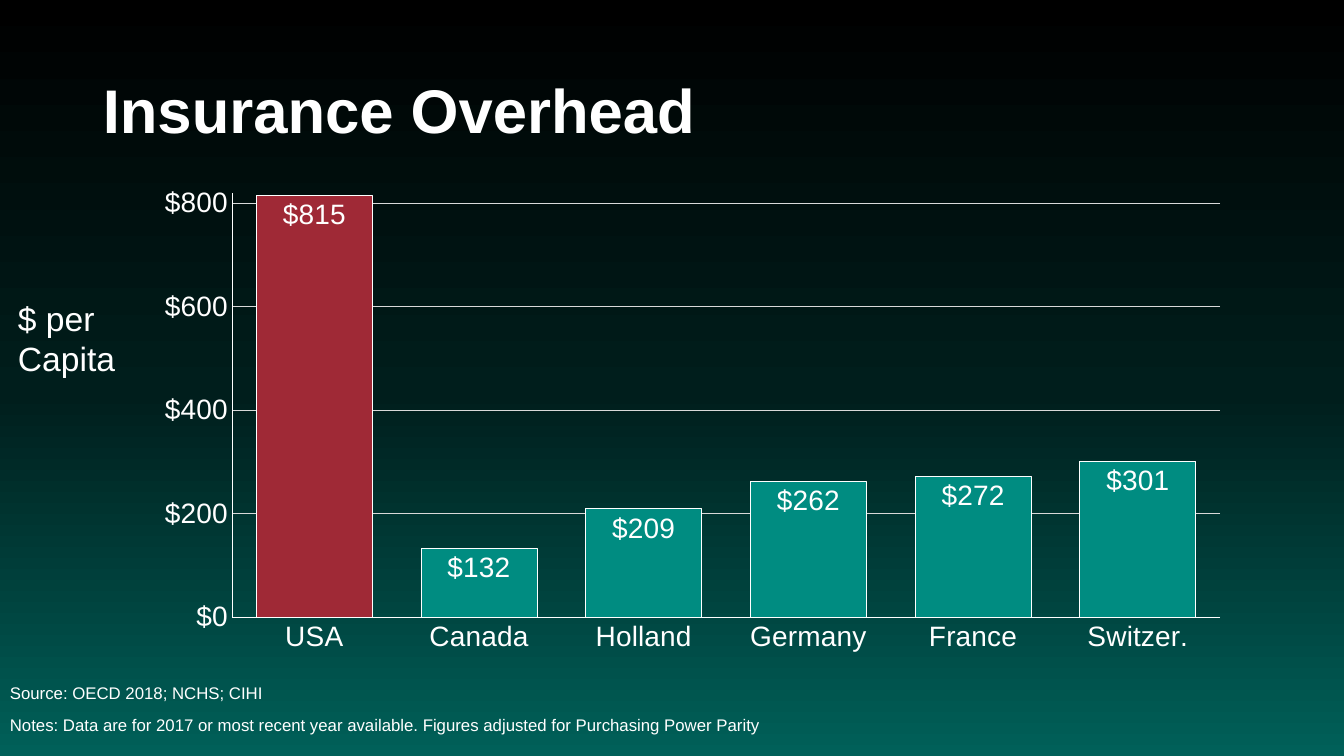
import pptx
import pptx.util
import pptx.chart.data
import pptx.dml.color
import pptx.enum.chart
import pptx.enum.text
import pptx.oxml
import pptx.oxml.ns
import lxml.etree

Inches, Pt = pptx.util.Inches, pptx.util.Pt
qn = pptx.oxml.ns.qn
COLORS = {"text": "FFFFFF", "bar": "008C81", "usa": "9F2936", "grid": "D9D9D9"}
BACKGROUND = [(0, "000000"), (52, "001E1C"), (100, "006059")]
DOLLARS = '"$"#,##0'


def rgb(name):
    return pptx.dml.color.RGBColor.from_string(COLORS[name])


def style(font, size, bold=False):
    font.name, font.size, font.bold = "Arial", Pt(size), bold
    font.color.rgb = rgb("text")


prs = pptx.Presentation()
prs.slide_width, prs.slide_height = Inches(13.33), Inches(7.5)
s = prs.slides.add_slide(prs.slide_layouts[5])

# Background gradient, top to bottom
fill = s.background.fill
fill.gradient()
fill.gradient_angle = 270
stops = next(s.background._cSld.iter(qn("a:gsLst")))
for stop in list(stops):
    stops.remove(stop)
for percent, color in BACKGROUND:
    stop = lxml.etree.SubElement(stops, qn("a:gs"), pos=str(percent * 1000))
    lxml.etree.SubElement(stop, qn("a:srgbClr"), val=color)

# Title, axis caption and source notes
notes = ("Source: OECD 2018; NCHS; CIHI\n"
         "Notes: Data are for 2017 or most recent year available. "
         "Figures adjusted for Purchasing Power Parity")
texts = [
    (s.shapes.title, "Insurance Overhead", (0.92, 0.4, 11.5, 1.45), 44, True, 0.9),
    (None, "$ per Capita", (0.08, 2.9, 1.87, 0.91), 24, False, 1.0),
    (None, notes, (0, 6.58, 9, 0.92), 12, False, 0.9),
]
for sp, text, box, size, bold, spacing in texts:
    box = [Inches(v) for v in box]
    if sp is None:
        sp = s.shapes.add_textbox(*box)
    sp.left, sp.top, sp.width, sp.height = box
    tf = sp.text_frame
    tf.text = text
    tf.word_wrap = True
    tf.auto_size = pptx.enum.text.MSO_AUTO_SIZE.NONE
    tf.vertical_anchor = pptx.enum.text.MSO_ANCHOR.MIDDLE
    for i, p in enumerate(tf.paragraphs):
        p.alignment = pptx.enum.text.PP_ALIGN.LEFT
        p.line_spacing = spacing
        p.space_before = Pt(10 if i else 0)
        for r in p.runs:
            style(r.font, size, bold)

# Column chart
data = pptx.chart.data.CategoryChartData()
data.categories = ["USA", "Canada", "Holland", "Germany", "France", "Switzer."]
data.add_series("Series 1", [815, 132, 209, 262, 272, 301])
chart = s.shapes.add_chart(
    pptx.enum.chart.XL_CHART_TYPE.COLUMN_CLUSTERED,
    Inches(1.43), Inches(1.77), Inches(10.89), Inches(4.81), data).chart
chart.has_title = chart.has_legend = False
style(chart.font, 20)

# Axes
for axis in (chart.category_axis, chart.value_axis):
    axis.major_tick_mark = axis.minor_tick_mark = pptx.enum.chart.XL_TICK_MARK.NONE
    axis.format.line.color.rgb = rgb("text")
    axis.format.line.width = Pt(0.75)
    style(axis.tick_labels.font, 20)
axis = chart.value_axis
axis.minimum_scale, axis.maximum_scale, axis.major_unit = 0, 820, 200
axis.tick_labels.number_format = DOLLARS
axis.tick_labels.number_format_is_linked = False
axis.major_gridlines.format.line.color.rgb = rgb("grid")
axis.major_gridlines.format.line.width = Pt(0.75)

# Columns, with the first one highlighted
plot = chart.plots[0]
plot.gap_width, plot.overlap, plot.vary_by_categories = 42, -27, False
series = plot.series[0]
for part, color in ((series, "bar"), (series.points[0], "usa")):
    part.format.fill.solid()
    part.format.fill.fore_color.rgb = rgb(color)
    part.format.line.color.rgb = rgb("text")
    part.format.line.width = Pt(0.75)
labels = series.data_labels
labels.show_value = True
labels.position = pptx.enum.chart.XL_LABEL_POSITION.INSIDE_END
labels.number_format = DOLLARS
labels.number_format_is_linked = False
style(labels.font, 20)

# Plot area placement inside the chart frame
area = chart._chartSpace.chart.plotArea
for old in area.findall(qn("c:layout")):
    area.remove(old)
layout = lxml.etree.Element(qn("c:layout"))
manual = lxml.etree.SubElement(layout, qn("c:manualLayout"))
for tag, value in (("layoutTarget", "inner"), ("xMode", "edge"), ("yMode", "edge"),
                   ("x", 0.08), ("y", 0.03), ("w", 0.9), ("h", 0.875)):
    lxml.etree.SubElement(manual, qn("c:" + tag), val=str(value))
area.insert(0, layout)

prs.save("out.pptx")
